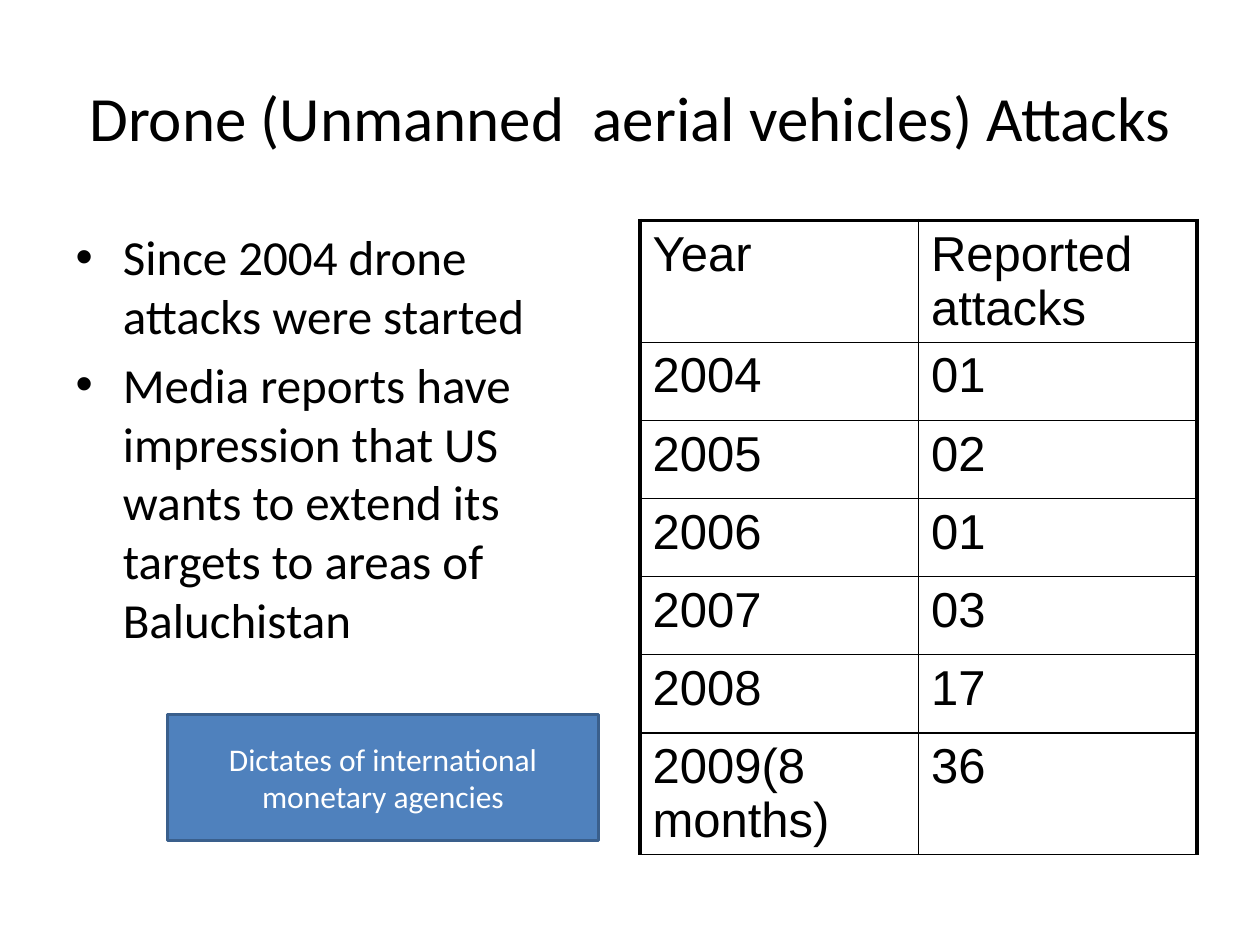
import dataclasses

import lxml.etree
import pptx
import pptx.dml.color
import pptx.enum.shapes
import pptx.enum.text
import pptx.oxml.ns
import pptx.util

Inches = pptx.util.Inches
Pt = pptx.util.Pt
Align = pptx.enum.text.PP_ALIGN
Anchor = pptx.enum.text.MSO_ANCHOR

BLACK, WHITE, BLUE, DARK_BLUE = "000000", "FFFFFF", "4F81BD", "3A5F8C"
THICK, THIN = 2.25, 1


@dataclasses.dataclass(frozen=True)
class Box:
    left: float
    top: float
    width: float
    height: float

    def lengths(self) -> list[int]:
        return [Inches(value) for value in dataclasses.astuple(self)]


@dataclasses.dataclass(frozen=True)
class TextStyle:
    size: int
    font_name: str = "Calibri"
    color: str = BLACK
    align: Align = Align.LEFT


TITLE_BOX = Box(0.5, 0.3, 9, 1.25)
BODY_BOX = Box(0.5, 1.75, 4.42, 4.95)
TABLE_BOX = Box(5.08, 1.75, 4.42, 4.34)
CALLOUT_BOX = Box(1.33, 5.67, 3.42, 1)

BULLETS = [
    "Since 2004 drone attacks were started",
    "Media reports have impression that US wants to extend its "
    "targets to areas of Baluchistan",
]
ATTACKS = [
    ("Year", "Reported attacks"),
    ("2004", "01"),
    ("2005", "02"),
    ("2006", "01"),
    ("2007", "03"),
    ("2008", "17"),
    ("2009(8 months)", "36"),
]


def rgb(color: str) -> pptx.dml.color.RGBColor:
    return pptx.dml.color.RGBColor.from_string(color)


def place(shape, box: Box) -> None:
    names = ("left", "top", "width", "height")
    for name, value in zip(names, box.lengths()):
        setattr(shape, name, value)


def write(text_frame, lines: list[str], style: TextStyle) -> None:
    text_frame.word_wrap = True
    for index, line in enumerate(lines):
        paragraph = text_frame.paragraphs[0] if index == 0 else text_frame.add_paragraph()
        paragraph.text = line
        paragraph.alignment = style.align
        if index == 0:
            paragraph.space_before = Pt(0)
        font_values = {"size": Pt(style.size), "name": style.font_name}
        for name, value in font_values.items():
            setattr(paragraph.font, name, value)
        paragraph.font.color.rgb = rgb(style.color)


def set_borders(cell, widths: dict[str, float]) -> None:
    """Draw the cell edges; they must come before the fill in the XML."""
    properties = cell._tc.get_or_add_tcPr()
    qn = pptx.oxml.ns.qn
    for position, (edge, width) in enumerate(widths.items()):
        line = lxml.etree.Element(qn(f"a:{edge}"), w=str(Pt(width)))
        fill = lxml.etree.SubElement(line, qn("a:solidFill"))
        lxml.etree.SubElement(fill, qn("a:srgbClr"), val=BLACK)
        properties.insert(position, line)


def add_attack_table(slide, box: Box, rows: list[tuple[str, str]]) -> None:
    row_count, column_count = len(rows), len(rows[0])
    table = slide.shapes.add_table(row_count, column_count, *box.lengths()).table
    table.first_row = table.horz_banding = False
    style = TextStyle(28, "Arial")
    for row_index, row in enumerate(rows):
        for column_index, text in enumerate(row):
            cell = table.cell(row_index, column_index)
            cell.fill.background()
            write(cell.text_frame, [text], style)
            set_borders(cell, {
                "lnL": THICK if column_index == 0 else THIN,
                "lnR": THICK if column_index == column_count - 1 else THIN,
                "lnT": THICK if row_index == 0 else THIN,
                "lnB": THIN,
            })


def add_callout(slide, box: Box, text: str) -> None:
    rectangle = pptx.enum.shapes.MSO_SHAPE.RECTANGLE
    shape = slide.shapes.add_shape(rectangle, *box.lengths())
    shape.shadow.inherit = False
    shape.fill.solid()
    shape.fill.fore_color.rgb = rgb(BLUE)
    shape.line.color.rgb = rgb(DARK_BLUE)
    shape.line.width = Pt(2)
    shape.text_frame.vertical_anchor = Anchor.MIDDLE
    write(shape.text_frame, [text], TextStyle(18, color=WHITE, align=Align.CENTER))


def main() -> None:
    presentation = pptx.Presentation()
    presentation.slide_width = Inches(10)
    presentation.slide_height = Inches(7.5)
    slide = presentation.slides.add_slide(presentation.slide_layouts[1])

    # Title
    title = slide.shapes.title
    place(title, TITLE_BOX)
    title.text_frame.vertical_anchor = Anchor.MIDDLE
    write(title.text_frame, ["Drone (Unmanned  aerial vehicles) Attacks"],
          TextStyle(36, align=Align.CENTER))

    # Bulleted list
    body = slide.placeholders[1]
    place(body, BODY_BOX)
    write(body.text_frame, BULLETS, TextStyle(28))

    # Attacks by year
    add_attack_table(slide, TABLE_BOX, ATTACKS)

    # Callout
    add_callout(slide, CALLOUT_BOX, "Dictates of international monetary agencies")

    presentation.save("out.pptx")


if __name__ == "__main__":
    main()
